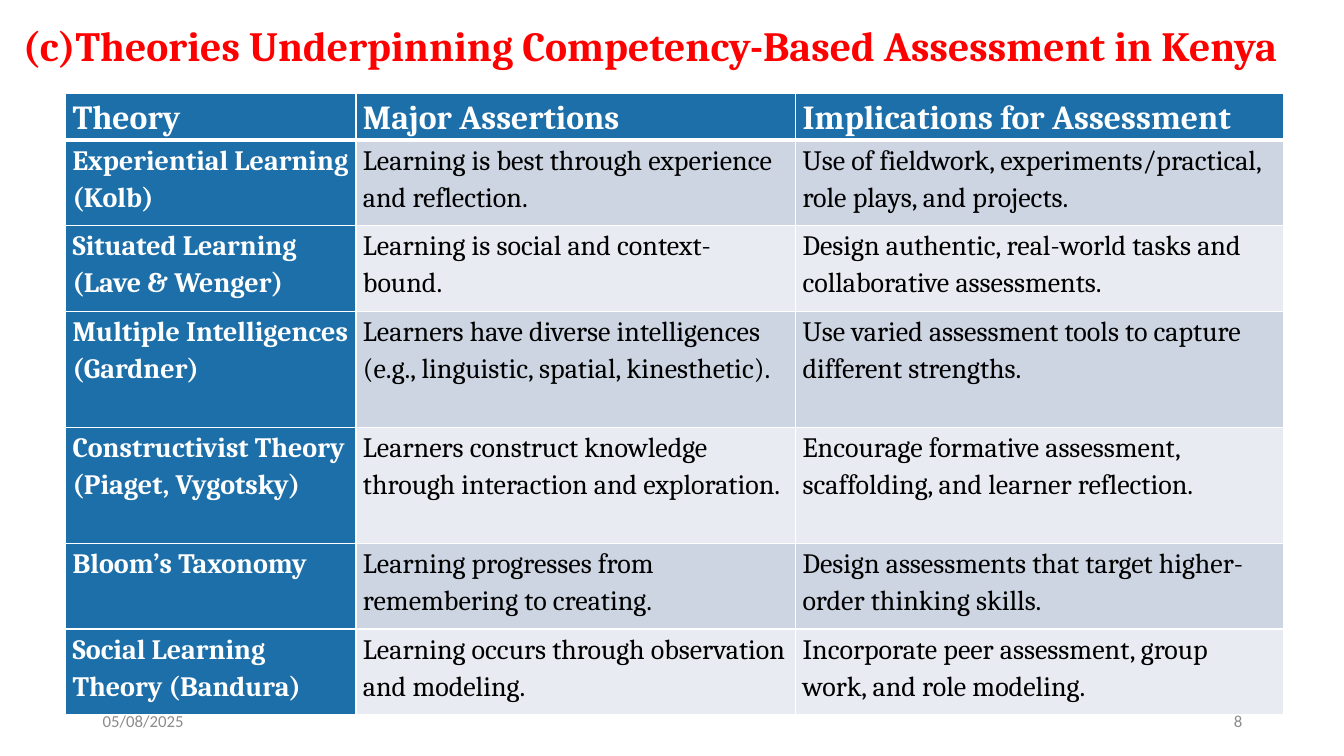
from lxml import etree
from pptx import Presentation
from pptx.dml.color import RGBColor
from pptx.enum.text import MSO_ANCHOR, PP_ALIGN
from pptx.oxml.ns import qn
from pptx.util import Inches, Pt

LEFT, RIGHT = PP_ALIGN.LEFT, PP_ALIGN.RIGHT
MIDDLE = MSO_ANCHOR.MIDDLE
RED = RGBColor(0xFF, 0x00, 0x00)
WHITE = RGBColor(0xFF, 0xFF, 0xFF)
BLACK = RGBColor(0x00, 0x00, 0x00)
GRAY = RGBColor(0x8C, 0x8C, 0x8C)
BLUE = RGBColor(0x1D, 0x6F, 0xA9)
BANDS = (RGBColor(0xCD, 0xD5, 0xE2), RGBColor(0xE8, 0xEB, 0xF1))

COLUMN_WIDTHS = (2.88, 4.36, 4.84)
ROW_HEIGHTS = (0.44, 0.85, 0.85, 1.15, 1.15, 0.85, 0.85)
THEORIES = (
    ("Theory", "Major Assertions", "Implications for Assessment"),
    ("Experiential Learning (Kolb)",
     "Learning is best through experience and reflection.",
     "Use of fieldwork, experiments/practical, role plays, and projects."),
    ("Situated Learning (Lave & Wenger)",
     "Learning is social and context-bound.",
     "Design authentic, real-world tasks and collaborative assessments."),
    ("Multiple Intelligences (Gardner)",
     "Learners have diverse intelligences (e.g., linguistic, spatial, kinesthetic).",
     "Use varied assessment tools to capture different strengths."),
    ("Constructivist Theory (Piaget, Vygotsky)",
     "Learners construct knowledge through interaction and exploration.",
     "Encourage formative assessment, scaffolding, and learner reflection."),
    ("Bloom’s Taxonomy",
     "Learning progresses from remembering to creating.",
     "Design assessments that target higher-order thinking skills."),
    ("Social Learning Theory (Bandura)",
     "Learning occurs through observation and modeling.",
     "Incorporate peer assessment, group work, and role modeling."),
)


def set_font(paragraph, name, size, color, bold=False):
    """Set the font of a whole paragraph."""
    font = paragraph.font
    font.name, font.size, font.bold = name, Pt(size), bold
    font.color.rgb = color


def add_text(slide, box, text, name, size, color, bold=False, alignment=LEFT):
    """Add one vertically centred line of text in a box given in inches."""
    frame = slide.shapes.add_textbox(*map(Inches, box)).text_frame
    frame.word_wrap = True
    frame.vertical_anchor = MIDDLE
    paragraph = frame.paragraphs[0]
    paragraph.text = text
    paragraph.alignment = alignment
    set_font(paragraph, name, size, color, bold)


def set_borders(cell, top, bottom):
    """Draw white borders round a cell, with top and bottom widths in points."""
    properties = cell._tc.get_or_add_tcPr()
    for side, width in (("L", 1), ("R", 1), ("T", top), ("B", bottom)):
        line = etree.SubElement(properties, qn(f"a:ln{side}"), w=str(Pt(width)))
        fill = etree.SubElement(line, qn("a:solidFill"))
        etree.SubElement(fill, qn("a:srgbClr"), val=str(WHITE))


def fill_cell(cell, text, row, column):
    """Write and style a table cell according to its row and column."""
    heading = row == 0 or column == 0
    cell.margin_left = cell.margin_right = Inches(0.07)
    cell.margin_top = cell.margin_bottom = 0
    set_borders(cell, 3 if row == 1 else 1, 3 if row == 0 else 1)
    cell.fill.solid()
    cell.fill.fore_color.rgb = BLUE if heading else BANDS[(row - 1) % 2]
    paragraph = cell.text_frame.paragraphs[0]
    paragraph.text = text
    paragraph.line_spacing = 1.15
    paragraph.space_after = Pt(10)
    set_font(paragraph, "Cambria", 24 if row == 0 else 20,
             WHITE if heading else BLACK, heading)


def add_theory_table(slide, left, top):
    """Add the table of theories with its top left corner in inches."""
    box = (left, top, sum(COLUMN_WIDTHS), sum(ROW_HEIGHTS))
    table = slide.shapes.add_table(
        len(ROW_HEIGHTS), len(COLUMN_WIDTHS), *map(Inches, box)).table
    for column, width in zip(table.columns, COLUMN_WIDTHS):
        column.width = Inches(width)
    for row, height in zip(table.rows, ROW_HEIGHTS):
        row.height = Inches(height)
    for row, texts in enumerate(THEORIES):
        for column, text in enumerate(texts):
            fill_cell(table.cell(row, column), text, row, column)


def add_footer(slide, left, top, width, height):
    """Add the date and slide number at the two ends of a box in inches."""
    part = 3
    add_text(slide, (left, top, part, height), "05/08/2025", "Calibri", 12, GRAY)
    add_text(slide, (left + width - part, top, part, height), "8",
             "Calibri", 12, GRAY, alignment=RIGHT)


def main():
    """Build the slide and save it."""
    presentation = Presentation()
    presentation.slide_width = Inches(13.33)
    presentation.slide_height = Inches(7.5)
    slide = presentation.slides.add_slide(presentation.slide_layouts[6])
    add_text(slide, (0.13, 0.1, 13.1, 0.69),
             "(c)Theories Underpinning Competency-Based Assessment in Kenya",
             "Cambria", 29.7, RED, bold=True)
    add_theory_table(slide, 0.65, 0.93)
    add_footer(slide, 0.92, 6.95, 11.5, 0.4)
    presentation.save("out.pptx")


if __name__ == "__main__":
    main()
